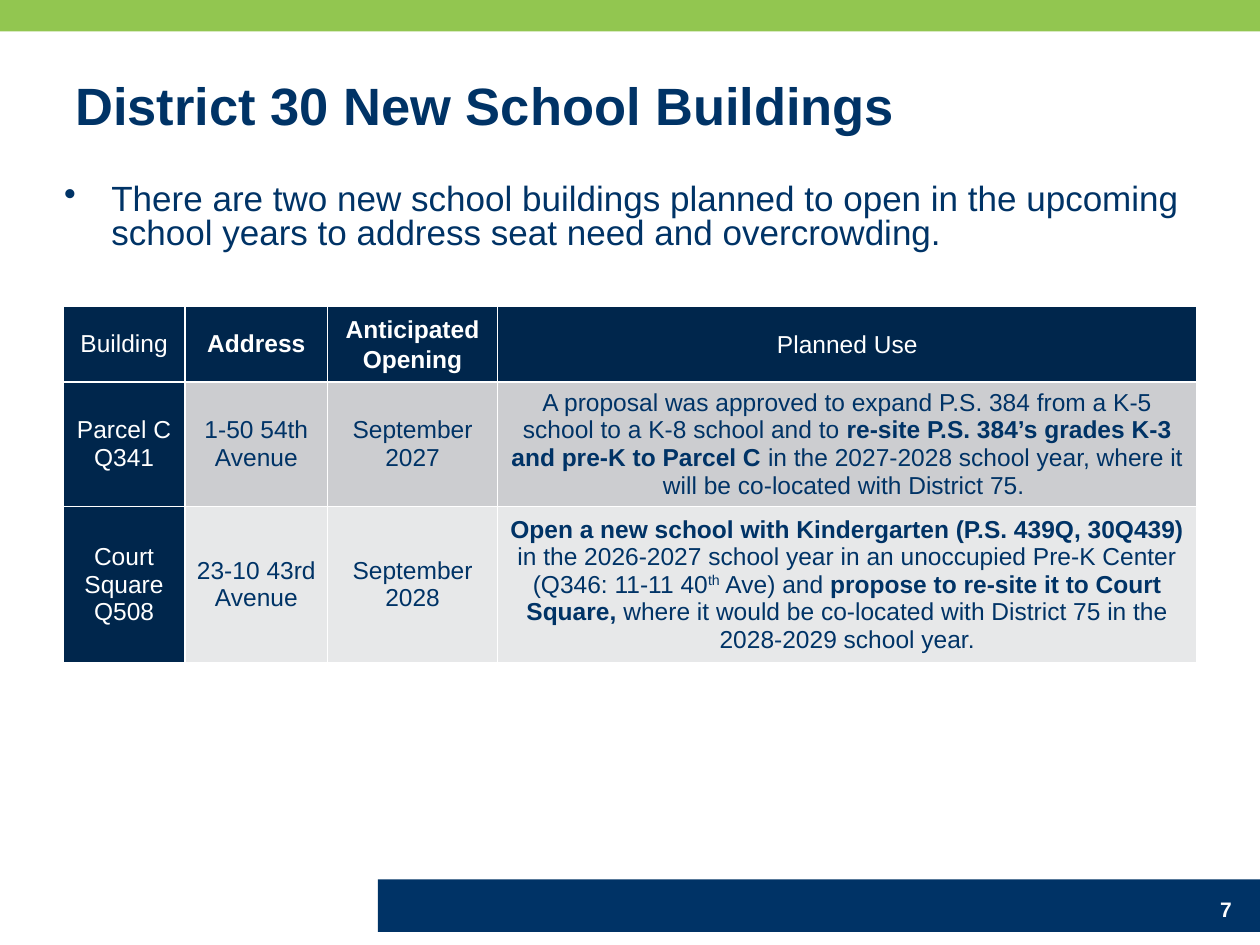
import pptx
import pptx.dml.color
import pptx.enum.shapes
import pptx.enum.text
import pptx.oxml
import pptx.oxml.ns
import pptx.util
from dataclasses import dataclass

Pt = pptx.util.Pt
PP_ALIGN = pptx.enum.text.PP_ALIGN
ANCHOR = pptx.enum.text.MSO_ANCHOR


@dataclass(frozen=True)
class Theme:
    font: str = "Arial"
    navy: str = "003366"
    dark: str = "00264C"
    green: str = "92C650"
    white: str = "FFFFFF"
    bands: tuple = ("CCCDD0", "E7E8E9")
    title: int = 30
    body: int = 20
    cell: int = 14
    number: int = 12


THEME = Theme()
COLUMNS = (69.84, 81.36, 97.2, 399.6)
ROWS = (43.2, 71.28, 89.28)
HEADER = (
    [("Building", "")],
    [("Address", "bold")],
    [("Anticipated\nOpening", "bold")],
    [("Planned Use", "")],
)
BUILDINGS = (
    (
        [("Parcel C\vQ341", "")],
        [("1-50 54th Avenue", "")],
        [("September 2027", "")],
        [
            ("A proposal was approved to expand P.S. 384 from a K-5 school to a K-8 school and to ", ""),
            ("re-site P.S. 384’s grades K-3 and pre-K to Parcel C ", "bold"),
            ("in the 2027-2028 school year, where it will be co-located with District 75. ", ""),
        ],
    ),
    (
        [("Court Square Q508", "")],
        [("23-10 43rd Avenue", "")],
        [("September 2028", "")],
        [
            ("Open a new school with Kindergarten (P.S. 439Q, 30Q439) ", "bold"),
            ("in the 2026-2027 school year in an unoccupied Pre-K Center (Q346: 11-11 40", ""),
            ("th", "super"),
            (" Ave) and ", ""),
            ("propose to re-site it to Court Square, ", "bold"),
            ("where it would be co-located with District 75 in the 2028-2029 school year.", ""),
        ],
    ),
)


def rgb(color):
    return pptx.dml.color.RGBColor.from_string(color)


def style_run(r, size, color, bold=False):
    r.font.name = THEME.font
    r.font.size = Pt(size)
    r.font.bold = bold
    r.font.color.rgb = rgb(color)


def add_bar(s, x, y, w, h, color):
    sp = s.shapes.add_shape(pptx.enum.shapes.MSO_SHAPE.RECTANGLE, Pt(x), Pt(y), Pt(w), Pt(h))
    sp.shadow.inherit = False
    sp.fill.solid()
    sp.fill.fore_color.rgb = rgb(color)
    sp.line.fill.background()


def add_text(s, x, y, w, h, text, size, color, bold=False, align=PP_ALIGN.LEFT, anchor=ANCHOR.TOP):
    tf = s.shapes.add_textbox(Pt(x), Pt(y), Pt(w), Pt(h)).text_frame
    tf.word_wrap = True
    tf.vertical_anchor = anchor
    tf.text = text
    p = tf.paragraphs[0]
    p.alignment = align
    style_run(p.runs[0], size, color, bold)
    return p


def add_bullet(p, indent, spacing):
    pPr = p._p.get_or_add_pPr()
    pPr.set("marL", str(Pt(indent)))
    pPr.set("indent", str(-Pt(indent)))
    bullet = pptx.oxml.parse_xml(f'<a:buChar {pptx.oxml.ns.nsdecls("a")} char="•"/>')
    pPr.append(bullet)
    p.line_spacing = Pt(spacing)


def set_borders(cell, color, width):
    tcPr = cell._tc.get_or_add_tcPr()
    for i, side in enumerate(("lnL", "lnR", "lnT", "lnB")):
        line = pptx.oxml.parse_xml(
            f'<a:{side} {pptx.oxml.ns.nsdecls("a")} w="{Pt(width)}">'
            f'<a:solidFill><a:srgbClr val="{color}"/></a:solidFill></a:{side}>'
        )
        tcPr.insert(i, line)


def fill_cell(cell, pieces, fill, color, spacing=1.0):
    cell.fill.solid()
    cell.fill.fore_color.rgb = rgb(fill)
    set_borders(cell, THEME.white, 1)
    cell.vertical_anchor = ANCHOR.MIDDLE
    cell.margin_left = cell.margin_right = Pt(5)
    cell.margin_top = cell.margin_bottom = Pt(0)
    tf = cell.text_frame
    tf.text = pieces[0][0]
    for text, _ in pieces[1:]:
        tf.paragraphs[0].add_run().text = text
    for p in tf.paragraphs:
        p.alignment = PP_ALIGN.CENTER
        p.line_spacing = spacing
        styles = [style for _, style in pieces]
        for i, r in enumerate(p.runs):
            style = styles[min(i, len(styles) - 1)]
            style_run(r, THEME.cell, color, style == "bold")
            if style == "super":
                r.font._element.set("baseline", "30000")


def add_buildings_table(s, x, y):
    shape = s.shapes.add_table(len(ROWS), len(COLUMNS), Pt(x), Pt(y), Pt(sum(COLUMNS)), Pt(sum(ROWS)))
    table = shape.table
    for column, width in zip(table.columns, COLUMNS):
        column.width = Pt(width)
    for row, height in zip(table.rows, ROWS):
        row.height = Pt(height)
    for c, pieces in enumerate(HEADER):
        fill_cell(table.cell(0, c), pieces, THEME.dark, THEME.white, 1.07 if c > 1 else 1.0)
    for i, (building, band) in enumerate(zip(BUILDINGS, THEME.bands), start=1):
        for c, pieces in enumerate(building):
            fill, color = (band, THEME.navy) if c else (THEME.dark, THEME.white)
            fill_cell(table.cell(i, c), pieces, fill, color)


def main():
    """Build the slide on new school buildings in District 30."""
    prs = pptx.Presentation()
    prs.slide_width, prs.slide_height = Pt(720), Pt(540)
    s = prs.slides.add_slide(prs.slide_layouts[6])
    add_bar(s, 216, 502.5, 504, 30, THEME.navy)
    add_bar(s, 0, 0, 720, 18, THEME.green)
    add_text(s, 633, 508.5, 78, 18, "7", THEME.number, THEME.white, True, PP_ALIGN.RIGHT)
    add_text(s, 36, 34.5, 668, 47, "District 30 New School Buildings",
             THEME.title, THEME.navy, True, anchor=ANCHOR.BOTTOM)
    p = add_text(s, 29.5, 102, 660, 210,
                 "There are two new school buildings planned to open in the upcoming "
                 "school years to address seat need and overcrowding.",
                 THEME.body, THEME.navy)
    add_bullet(p, 27, 19.5)
    add_buildings_table(s, 36, 175)
    prs.save("out.pptx")


if __name__ == "__main__":
    main()
